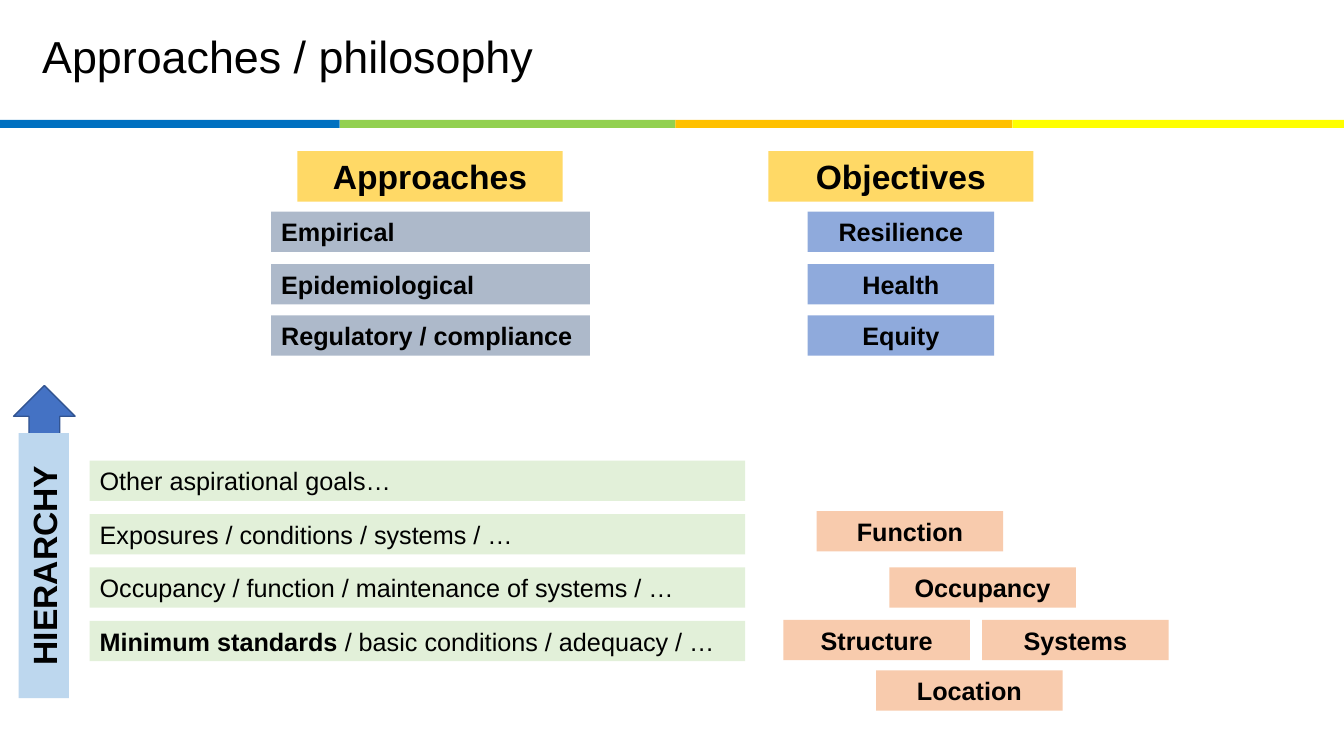
from pptx import Presentation
from pptx.dml.color import RGBColor
from pptx.enum.shapes import MSO_SHAPE
from pptx.enum.text import MSO_ANCHOR, PP_ALIGN
from pptx.util import Pt

PX = 9144
FONT = "Arial"
RECT, ARROW = MSO_SHAPE.RECTANGLE, MSO_SHAPE.RIGHT_ARROW
TOP, MIDDLE = MSO_ANCHOR.TOP, MSO_ANCHOR.MIDDLE
LEFT, CENTER = PP_ALIGN.LEFT, PP_ALIGN.CENTER
COLORS = {
    "text": "000000", "blue": "0070C0", "green": "92D050", "orange": "FFC000",
    "yellow": "FFFF00", "heading": "FFD966", "approach": "ADB9CA",
    "objective": "8FAADC", "level": "E2F0D9", "factor": "F8CBAD",
    "hierarchy": "BDD7EE", "arrow": "4472C4", "arrow_line": "325491",
}


def rgb(name):
    """Return the named colour."""
    return RGBColor.from_string(COLORS[name])


def px(*lengths):
    """Turn pixel lengths into EMU."""
    return [n * PX for n in lengths]


def add_block(s, box, fill, kind=RECT, line=None):
    """Add a filled shape, outlined only when a line colour is given."""
    sp = s.shapes.add_shape(kind, *px(*box))
    sp.shadow.inherit = False
    sp.fill.solid()
    sp.fill.fore_color.rgb = rgb(fill)
    if line:
        sp.line.color.rgb = rgb(line)
        sp.line.width = Pt(1)
    else:
        sp.line.fill.background()
    return sp


def set_font(p, size, bold):
    """Set the font of a paragraph."""
    p.font.name = FONT
    p.font.size = Pt(size)
    p.font.bold = bold
    p.font.color.rgb = rgb("text")


def add_label(s, text, box, fill, size=18, bold=True, align=CENTER):
    """Add a filled rectangle with one line of text."""
    sp = add_block(s, box, fill)
    tf = sp.text_frame
    tf.vertical_anchor = TOP
    p = tf.paragraphs[0]
    p.alignment = align
    p.add_run().text = text
    set_font(p, size, bold)
    return sp


def add_title(s, text):
    """Add the slide title."""
    tf = s.shapes.add_textbox(*px(32, 10, 1209, 97)).text_frame
    tf.word_wrap = True
    tf.vertical_anchor = MIDDLE
    p = tf.paragraphs[0]
    p.line_spacing = 0.9
    p.add_run().text = text
    set_font(p, 32, False)


def add_stripe(s):
    """Add the four-colour stripe under the title."""
    for i, color in enumerate(("blue", "green", "orange", "yellow")):
        left = round(i * 1333 / 4) + (4 if i else 0)
        right = min(round((i + 1) * 1333 / 4) + 4, 1333)
        add_block(s, (left, 119, right - left, 8), color)


def add_hierarchy(s):
    """Add the upward arrow, its label and the levels from top to bottom."""
    add_block(s, (8, 388, 72, 61), "arrow", ARROW, "arrow_line").rotation = 270
    levels = (
        "Other aspirational goals…",
        "Exposures / conditions / systems / …",
        "Occupancy / function / maintenance of systems / …",
    )
    for i, text in enumerate(levels):
        add_label(s, text, (89, 457 + 53 * i, 650, 40), "level",
                  bold=False, align=LEFT)
    base = add_label(s, "Minimum standards ", (89, 616, 650, 40), "level",
                     bold=False, align=LEFT)
    p = base.text_frame.paragraphs[0]
    p.runs[0].font.bold = True
    p.add_run().text = "/ basic conditions / adequacy / …"
    label = add_label(s, "HIERARCHY", (-88, 536, 263, 50), "hierarchy", 24)
    label.rotation = 270


def main():
    """Build and save the slide."""
    prs = Presentation()
    prs.slide_width, prs.slide_height = px(1333, 750)
    s = prs.slides.add_slide(prs.slide_layouts[6])
    add_stripe(s)
    add_title(s, "Approaches / philosophy")
    add_hierarchy(s)

    for text, left in (("Approaches", 295), ("Objectives", 762)):
        add_label(s, text, (left, 150, 263, 50), "heading", 24)
    rows = (
        ("Empirical", "Resilience", 210),
        ("Epidemiological", "Health", 262),
        ("Regulatory / compliance", "Equity", 313),
    )
    for approach, objective, top in rows:
        add_label(s, approach, (269, top, 316, 40), "approach", align=LEFT)
        add_label(s, objective, (801, top, 185, 40), "objective")

    factors = (
        ("Function", 810, 507), ("Occupancy", 882, 563),
        ("Structure", 777, 615), ("Systems", 974, 615),
        ("Location", 869, 665),
    )
    for text, left, top in factors:
        add_label(s, text, (left, top, 185, 40), "factor")
    prs.save("out.pptx")


if __name__ == "__main__":
    main()
